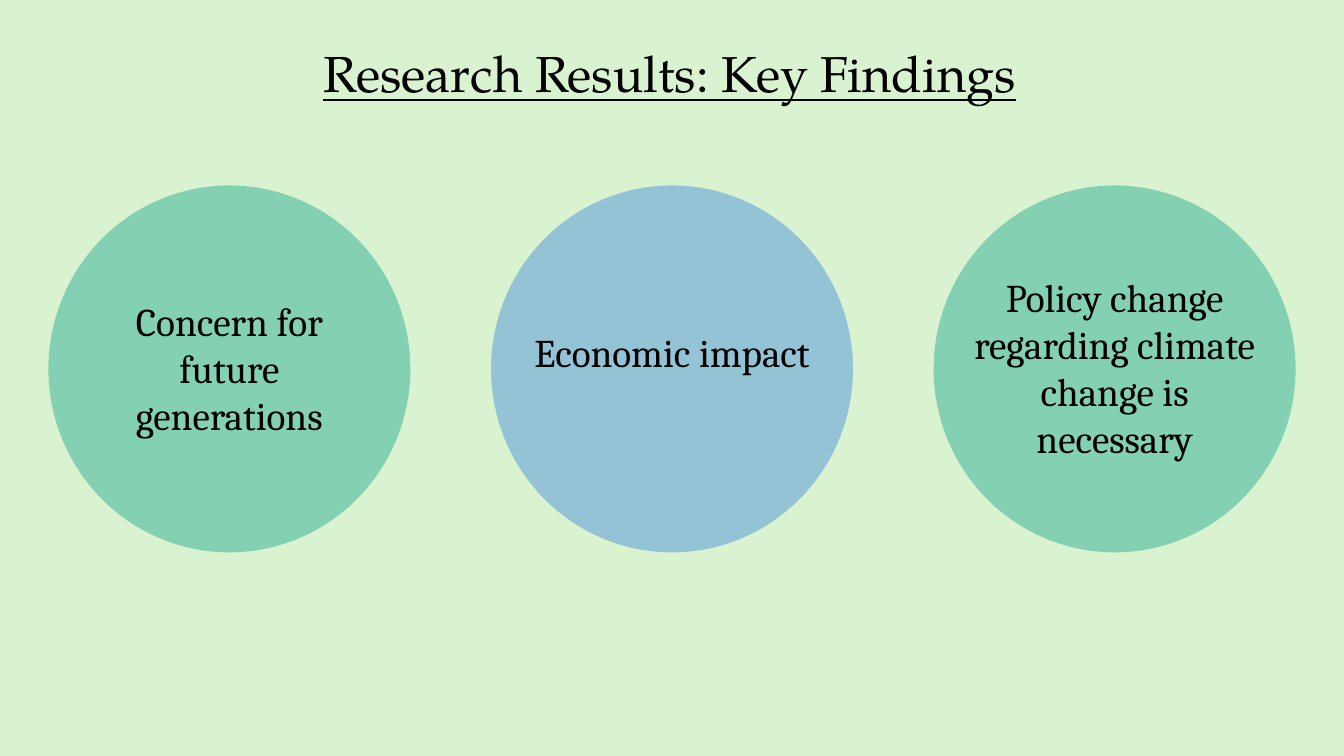
"""Builds the key findings slide with three translucent circles."""
import pptx
import pptx.chart.data
import pptx.dml.color
import pptx.enum.shapes
import pptx.enum.text
import pptx.oxml
import pptx.oxml.ns
import pptx.util
from pptx.util import Inches

COLORS = {"background": "D9F2D0", "green": "31AF95", "blue": "4E95D9", "text": "000000"}
TITLE = "Research Results: Key Findings"
FINDINGS = [
    {"text": "Concern for future generations", "color": "green",
     "top": 2.9, "width": 2.5, "height": 1.51, "wrap": True},
    {"text": "Economic impact", "color": "blue",
     "top": 3.21, "width": 3.18, "height": 0.57, "wrap": False},
    {"text": "Policy change regarding climate change is necessary", "color": "green",
     "top": 2.66, "width": 2.99, "height": 1.99, "wrap": True},
]
LEFT, TOP, WIDTH, HEIGHT, PITCH = 0.48, 1.84, 3.59, 3.64, 4.39
OPACITY = 50


def rgb(name):
    return pptx.dml.color.RGBColor.from_string(COLORS[name])


def add_circle(s, left, color):
    sp = s.shapes.add_shape(pptx.enum.shapes.MSO_SHAPE.OVAL, Inches(left), Inches(TOP),
                            Inches(WIDTH), Inches(HEIGHT))
    sp.shadow.inherit = False
    sp.line.fill.background()
    sp.fill.solid()
    sp.fill.fore_color.rgb = rgb(color)
    clr = sp.fill._xPr.find(".//" + pptx.oxml.ns.qn("a:srgbClr"))
    alpha = pptx.oxml.parse_xml(
        f'<a:alpha {pptx.oxml.ns.nsdecls("a")} val="{OPACITY * 1000}"/>')
    clr.append(alpha)


def add_text(s, text, left, top, width, height, font, size, wrap=True):
    tf = s.shapes.add_textbox(Inches(left), Inches(top), Inches(width), Inches(height)).text_frame
    tf.word_wrap = wrap
    p = tf.paragraphs[0]
    p.text = text
    p.font.name = font
    p.font.size = pptx.util.Pt(size)
    p.font.color.rgb = rgb("text")
    return tf


def main():
    prs = pptx.Presentation()
    prs.slide_width, prs.slide_height = Inches(13.33), Inches(7.5)
    s = prs.slides.add_slide(prs.slide_layouts[6])
    s.background.fill.solid()
    s.background.fill.fore_color.rgb = rgb("background")

    tf = add_text(s, TITLE, 3.11, 0.03, 8.04, 1.45, "TeX Gyre Pagella", 36)
    tf.vertical_anchor = pptx.enum.text.MSO_ANCHOR.MIDDLE
    tf.paragraphs[0].line_spacing = 0.9
    tf.paragraphs[0].font.underline = True

    for i, finding in enumerate(FINDINGS):
        left = LEFT + i * PITCH
        add_circle(s, left, finding["color"])
        tf = add_text(s, finding["text"], left + (WIDTH - finding["width"]) / 2, finding["top"],
                      finding["width"], finding["height"], "Cambria", 28, finding["wrap"])
        tf.auto_size = pptx.enum.text.MSO_AUTO_SIZE.SHAPE_TO_FIT_TEXT
        tf.paragraphs[0].alignment = pptx.enum.text.PP_ALIGN.CENTER

    prs.save("out.pptx")


if __name__ == "__main__":
    main()
